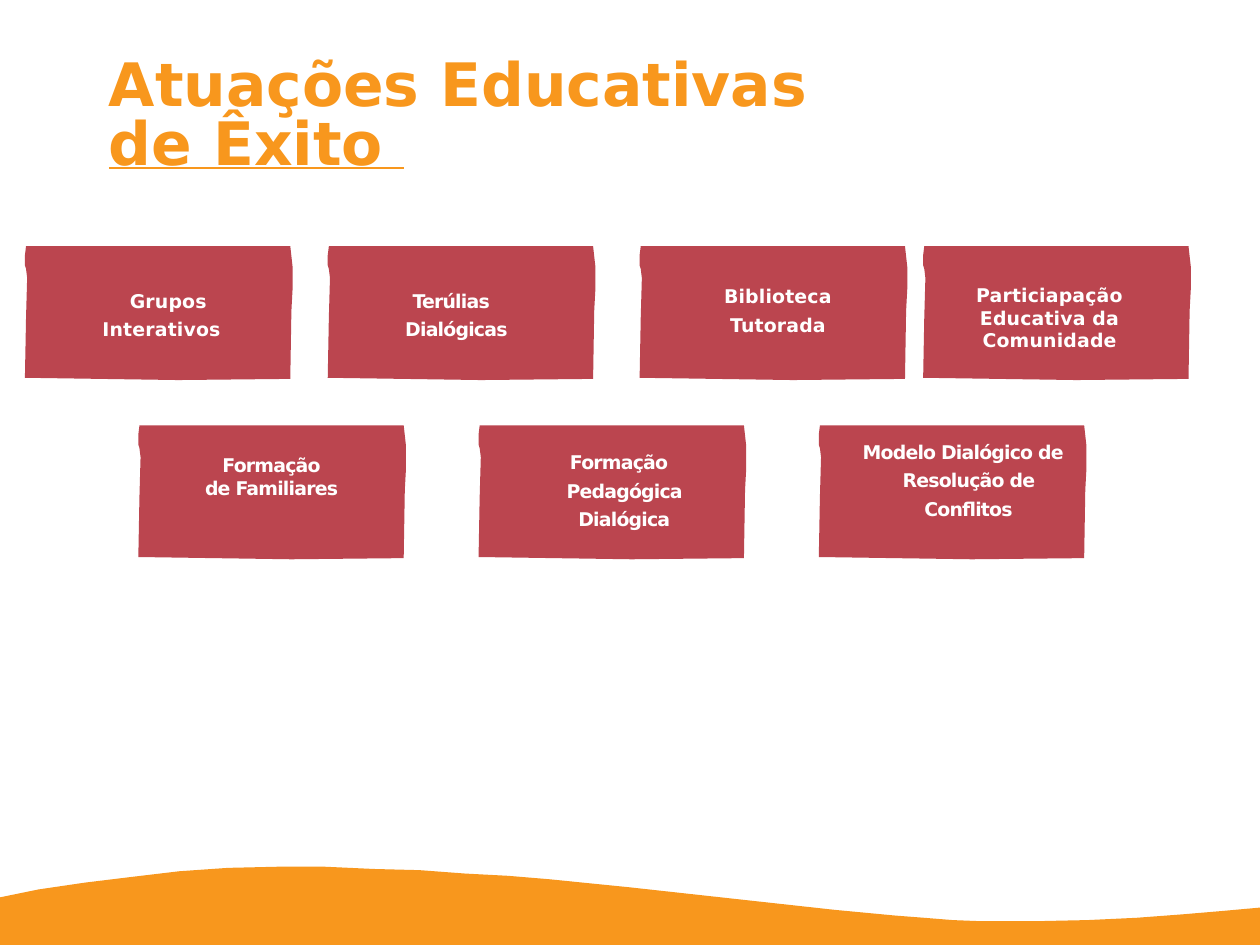
"""Build the slide of seven successful educational actions."""
from dataclasses import dataclass

from pptx import Presentation
from pptx import util as u
from pptx.dml.color import RGBColor
from pptx.enum import text

TITLE = "Atuações Educativas\nde Êxito "
TITLE_BOX = (0.96, 0.43, 9.19, 1.13)
TITLE_LEADING = (44.1, 37.5)

# label, card corner, text box, (margin, first-line indent), line spacing, tracking
ACTIONS = [
    ("Grupos Interativos", (0.22, 2.17), (0.81, 2.5, 1.22, 0.49), (0.01, 0.12), 1.26, 0.1),
    ("Terúlias Dialógicas", (2.89, 2.17), (3.22, 2.5, 1.5, 0.58), (0.11, -0.1), 1.26, -0.5),
    ("Biblioteca Tutorada", (5.64, 2.17), (6.14, 2.46, 1.27, 0.54), (0.17, 0), 1.26, 0.1),
    ("Particiapação Educativa da Comunidade", (8.14, 2.17), (8.39, 2.5, 1.72, 0.29), (0.01, 0), 1, 0.1),
    ("Formação\nde Familiares", (1.22, 3.75), (1.64, 4, 1.5, 0.47), (0.01, 0), 1, -0.5),
    ("Formação Pedagógica Dialógica", (4.22, 3.75), (4.81, 3.92, 1.28, 0.86), (0.11, -0.1), 1.26, -0.5),
    ("Modelo Dialógico de Resolução de Conflitos", (7.22, 3.75), (7.56, 3.83, 1.85, 0.98), (0.11, -0.1), 1.26, -0.5),
]

CARD_OUTLINE = [
    (1, 0), (0, 8), (0, 17), (1, 20), (2, 28), (1, 63), (0, 116),
    (135, 118), (234, 117), (235, 57), (236, 38), (236, 18), (234, 0),
]
WAVE_OUTLINE = [
    (0, 791), (34, 784), (75, 778), (116, 773), (158, 768), (201, 765),
    (244, 764), (287, 764), (330, 766), (370, 767), (410, 770), (448, 772),
    (484, 775), (554, 782), (736, 802), (789, 807), (815, 809), (840, 811),
    (865, 812), (913, 812), (959, 811), (1002, 809), (1042, 806),
    (1078, 803), (1111, 800), (1111, 833), (0, 833),
]


@dataclass(frozen=True)
class Theme:
    """Colours, font and type sizes."""
    orange: RGBColor = RGBColor(0xF8, 0x97, 0x1D)
    red: RGBColor = RGBColor(0xBB, 0x45, 0x4F)
    white: RGBColor = RGBColor(0xFF, 0xFF, 0xFF)
    font: str = "DejaVu Sans"
    title_size: int = 38
    label_size: int = 12


THEME = Theme()


def add_outline(page, points, colour, left=0, top=0):
    """Draw a filled outline given in hundredths of an inch."""
    builder = page.shapes.build_freeform(*points[0], scale=u.Inches(0.01))
    builder.add_line_segments(points[1:], close=True)
    shape = builder.convert_to_shape(u.Inches(left), u.Inches(top))
    shape.shadow.inherit = False
    shape.fill.solid()
    shape.fill.fore_color.rgb = colour
    shape.line.fill.background()


def prepare_frame(shape, wording):
    """Fill a text frame without insets, anchored at the top."""
    frame = shape.text_frame
    frame.text = wording
    frame.word_wrap = True
    frame.auto_size = text.MSO_AUTO_SIZE.NONE
    frame.vertical_anchor = text.MSO_ANCHOR.TOP
    frame.margin_left = frame.margin_right = 0
    frame.margin_top = frame.margin_bottom = 0
    return frame


def format_paragraph(para, size, colour, align, leading, tracking=0):
    """Set alignment, line spacing and type of one paragraph."""
    para.alignment = align
    para.line_spacing = leading
    para.space_before = para.space_after = u.Pt(0)
    for span in para.runs:
        span.font.name = THEME.font
        span.font.size = u.Pt(size)
        span.font.bold = True
        span.font.color.rgb = colour
        span.font._element.set("spc", str(round(tracking * 100)))


def add_title(page):
    """Place the title and underline its second line."""
    title = page.shapes.title
    title.left, title.top, title.width, title.height = map(u.Inches, TITLE_BOX)
    frame = prepare_frame(title, TITLE)
    for para, leading in zip(frame.paragraphs, TITLE_LEADING):
        format_paragraph(para, THEME.title_size, THEME.orange, text.PP_ALIGN.LEFT, u.Pt(leading))
    frame.paragraphs[-1].runs[0].font.underline = True


def add_action(page, label, corner, box, indents, leading, tracking):
    """Draw a card and its label."""
    add_outline(page, CARD_OUTLINE, THEME.red, *corner)
    frame = prepare_frame(page.shapes.add_textbox(*map(u.Inches, box)), label)
    for para in frame.paragraphs:
        format_paragraph(para, THEME.label_size, THEME.white, text.PP_ALIGN.CENTER, leading, tracking)
        properties = para._p.get_or_add_pPr()
        for name, length in zip(("marL", "indent"), indents):
            properties.set(name, str(u.Inches(length)))


def main():
    """Assemble and save the deck."""
    deck = Presentation()
    deck.slide_width, deck.slide_height = u.Inches(11.11), u.Inches(8.33)
    page = deck.slides.add_slide(deck.slide_layouts[5])
    add_outline(page, WAVE_OUTLINE, THEME.orange, 0, 0)
    add_title(page)
    for action in ACTIONS:
        add_action(page, *action)
    deck.save("out.pptx")


if __name__ == "__main__":
    main()
